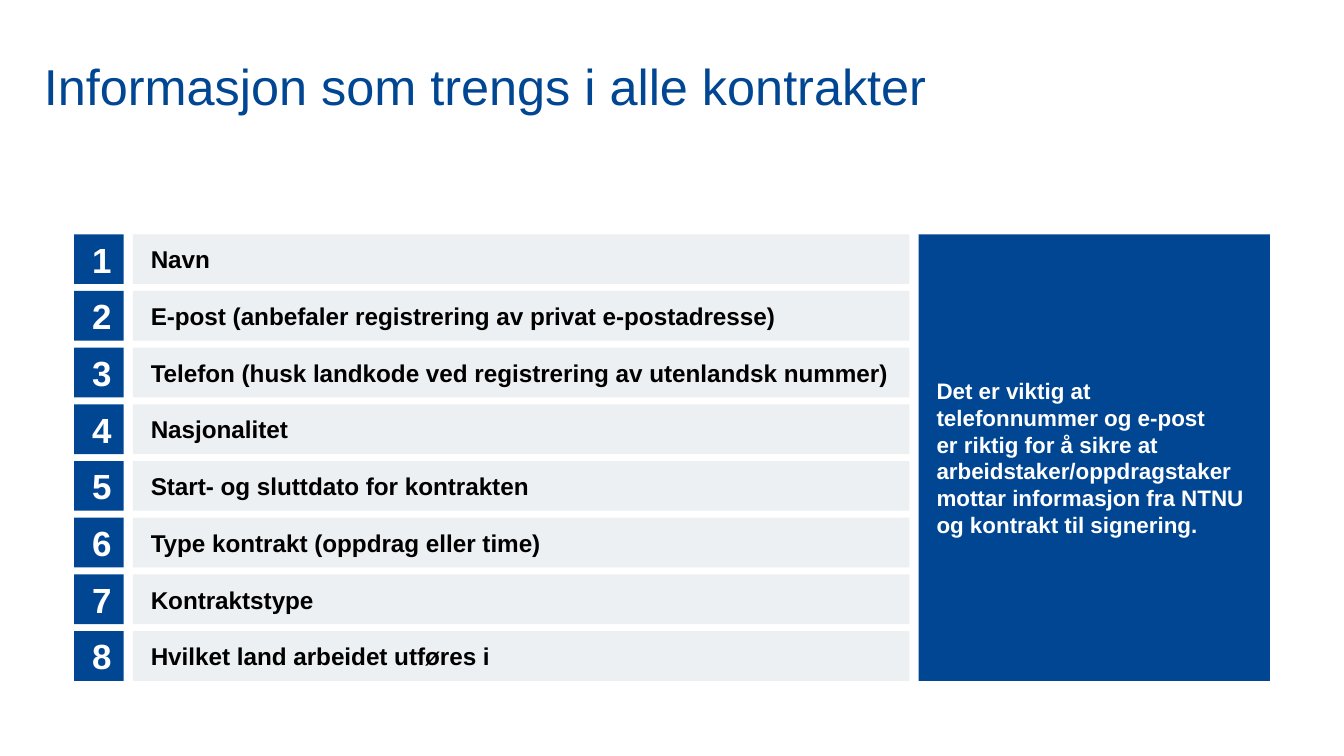
from pptx import Presentation
from pptx import util as u
from pptx.dml.color import RGBColor
from pptx.enum import shapes, text

BLUE = RGBColor(0x01, 0x46, 0x93)
GREY = RGBColor(0xEC, 0xF0, 0xF3)
WHITE = RGBColor(0xFF, 0xFF, 0xFF)
BLACK = RGBColor(0x00, 0x00, 0x00)

FIELDS = [
    "Navn",
    "E-post (anbefaler registrering av privat e-postadresse)",
    "Telefon (husk landkode ved registrering av utenlandsk nummer)",
    "Nasjonalitet",
    "Start- og sluttdato for kontrakten",
    "Type kontrakt (oppdrag eller time)",
    "Kontraktstype",
    "Hvilket land arbeidet utføres i",
]
NOTICE = [
    "Det er viktig at telefonnummer og e-post",
    "er riktig for å sikre at arbeidstaker/oppdragstaker mottar informasjon "
    "fra NTNU og kontrakt til signering.",
]


def write_text(shape, lines, size, color, bold=True, align=text.PP_ALIGN.LEFT,
               inset=(0.34, 0.34), spacing=1.0):
    frame = shape.text_frame
    horizontal, vertical = map(u.Cm, inset)
    frame_format = {
        "word_wrap": True,
        "vertical_anchor": text.MSO_ANCHOR.MIDDLE,
        "margin_left": horizontal,
        "margin_right": horizontal,
        "margin_top": vertical,
        "margin_bottom": vertical,
    }
    for name, value in frame_format.items():
        setattr(frame, name, value)
    frame.text = "\n".join(lines)
    font_format = {"name": "Arial", "size": u.Pt(size), "bold": bold}
    for paragraph in frame.paragraphs:
        paragraph.alignment = align
        paragraph.line_spacing = spacing
        for run in paragraph.runs:
            for name, value in font_format.items():
                setattr(run.font, name, value)
            run.font.color.rgb = color


def add_panel(slide, box, fill):
    shape = slide.shapes.add_shape(shapes.MSO_SHAPE.RECTANGLE, *map(u.Cm, box))
    shape.shadow.inherit = False
    shape.fill.solid()
    shape.fill.fore_color.rgb = fill
    shape.line.fill.background()
    return shape


def add_title(slide, box):
    shape = slide.shapes.add_textbox(*map(u.Cm, box))
    write_text(shape, ["Informasjon som trengs i alle kontrakter"], 27, BLUE,
               bold=False, inset=(0.25, 0.13), spacing=0.9)


def add_numbered_list(slide, box, side=0.94, gap=0.17):
    left, top, width, height = box
    pitch = (height - side) / (len(FIELDS) - 1)
    indent = side + gap
    for index, field in enumerate(FIELDS):
        row_top = top + index * pitch
        number = add_panel(slide, (left, row_top, side, side), BLUE)
        write_text(number, [str(index + 1)], 18.7, WHITE,
                   align=text.PP_ALIGN.CENTER)
        label = add_panel(
            slide, (left + indent, row_top, width - indent, side), GREY)
        write_text(label, [field], 13, BLACK)


def add_notice(slide, box):
    write_text(add_panel(slide, box, BLUE), NOTICE, 12, WHITE)


def main():
    presentation = Presentation()
    presentation.slide_width = u.Cm(25.4)
    presentation.slide_height = u.Cm(14.29)
    slide = presentation.slides.add_slide(presentation.slide_layouts[6])
    add_numbered_list(slide, (1.4, 4.43, 15.79, 8.44))
    add_notice(slide, (17.36, 4.43, 6.64, 8.44))
    add_title(slide, (0.58, 0.64, 20.24, 2.11))
    presentation.save("out.pptx")


if __name__ == "__main__":
    main()
